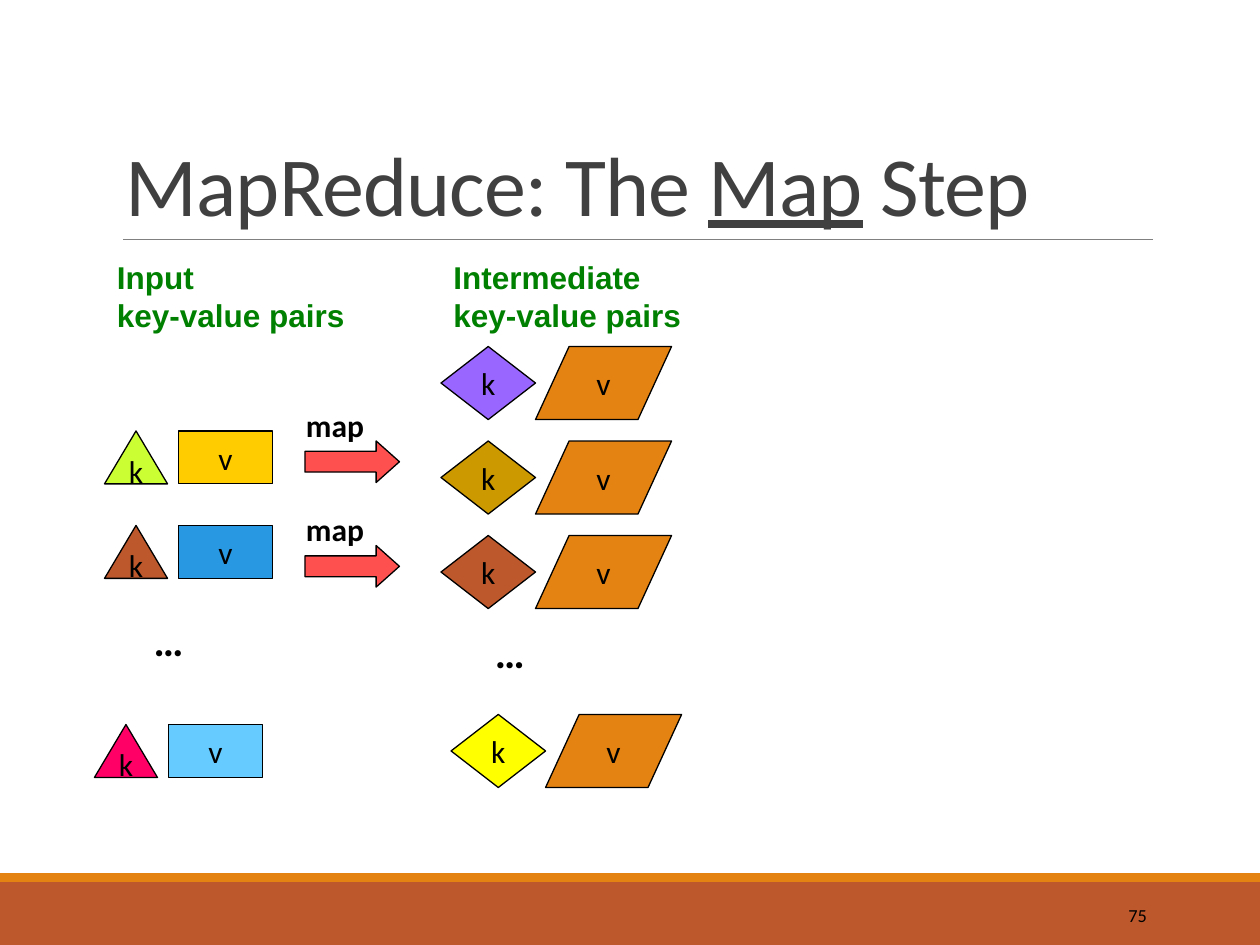
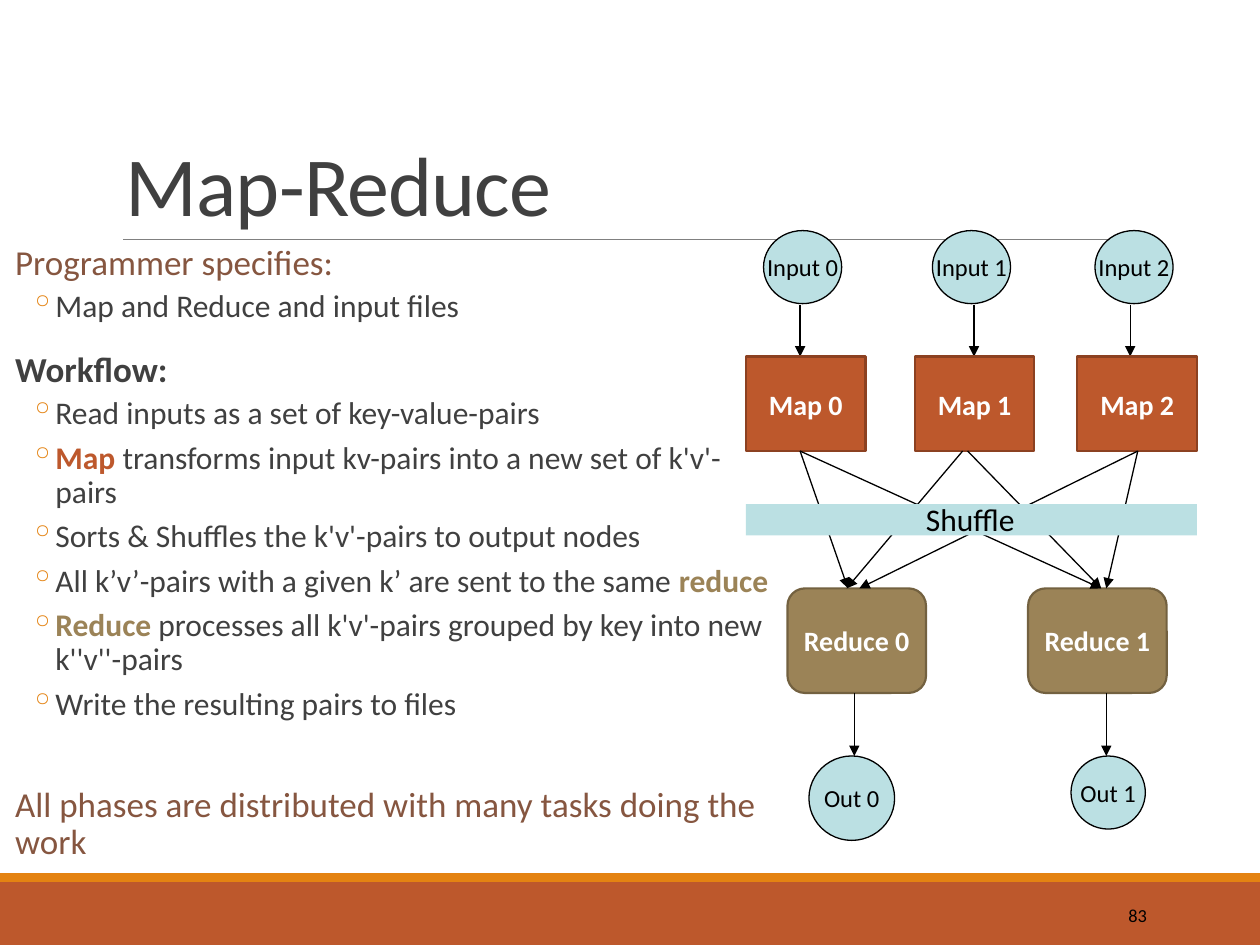
import pptx
import pptx.dml.color
import pptx.enum.shapes
import pptx.enum.text
import pptx.oxml.ns
import pptx.util
from lxml import etree

RGBColor = pptx.dml.color.RGBColor
Inches = pptx.util.Inches
Pt = pptx.util.Pt
qn = pptx.oxml.ns.qn
SHAPE = pptx.enum.shapes.MSO_SHAPE
ALIGN = pptx.enum.text.PP_ALIGN
ANCHOR = pptx.enum.text.MSO_ANCHOR

BLACK = RGBColor(0x00, 0x00, 0x00)
WHITE = RGBColor(0xFF, 0xFF, 0xFF)
GRAY = RGBColor(0x80, 0x80, 0x80)
DARK_GRAY = RGBColor(0x40, 0x40, 0x40)
RUST = RGBColor(0xBD, 0x58, 0x2C)
DARK_RUST = RGBColor(0x8C, 0x41, 0x21)
ORANGE = RGBColor(0xE4, 0x83, 0x12)
BROWN = RGBColor(0x86, 0x56, 0x40)
KHAKI = RGBColor(0x9B, 0x83, 0x57)
DARK_KHAKI = RGBColor(0x73, 0x61, 0x40)
PALE_BLUE = RGBColor(0xBB, 0xE0, 0xE3)
GREEN = RGBColor(0x00, 0x80, 0x00)
ARROW_RED = RGBColor(0xFF, 0x50, 0x50)
BLUE = RGBColor(0x29, 0x98, 0xE3)
SKY = RGBColor(0x66, 0xCC, 0xFF)
AMBER = RGBColor(0xFF, 0xCC, 0x00)
LIME = RGBColor(0xCC, 0xFF, 0x33)
PINK = RGBColor(0xFF, 0x00, 0x66)
PURPLE = RGBColor(0x99, 0x66, 0xFF)
OCHRE = RGBColor(0xCC, 0x99, 0x00)
YELLOW = RGBColor(0xFF, 0xFF, 0x00)


def add_box(slide, kind, at, lines=(), size=18, color=BLACK, bold=False, font="Calibri",
            fill=None, outline=None, outline_width=0.75, wrap=False,
            align=ALIGN.CENTER, anchor=ANCHOR.MIDDLE):
    """Add a preset shape, or a text box if kind is None; a line is a list of (text, changes)."""
    place = [Inches(length) for length in at]
    if kind is None:
        shape = slide.shapes.add_textbox(*place)
    else:
        shape = slide.shapes.add_shape(kind, *place)
        shape.shadow.inherit = False
        shape.fill.solid()
        shape.fill.fore_color.rgb = fill
        if outline is None:
            shape.line.fill.background()
        else:
            shape.line.color.rgb = outline
            shape.line.width = Pt(outline_width)
    frame = shape.text_frame
    frame.word_wrap = wrap
    frame.vertical_anchor = anchor
    for index, line in enumerate(lines):
        paragraph = frame.add_paragraph() if index else frame.paragraphs[0]
        paragraph.alignment = align
        for text, changes in line:
            run = paragraph.add_run()
            run.text = text
            run.font.name = font
            run.font.size = Pt(changes.get("size", size))
            run.font.bold = changes.get("bold", bold)
            run.font.underline = changes.get("underline", False)
            run.font.color.rgb = changes.get("color", color)
    return shape


def add_line(slide, start, end, color=BLACK, width=0.75, arrow=True):
    connector = slide.shapes.add_connector(
        pptx.enum.shapes.MSO_CONNECTOR.STRAIGHT,
        *[Inches(length) for length in (*start, *end)])
    connector.line.color.rgb = color
    connector.line.width = Pt(width)
    properties = connector._element.spPr
    if arrow:
        etree.SubElement(properties.find(qn("a:ln")), qn("a:tailEnd"), type="triangle")
    etree.SubElement(properties, qn("a:effectLst"))


presentation = pptx.Presentation()
presentation.slide_width = Inches(10)
presentation.slide_height = Inches(7.5)

# Shared frame: bands, rule, title and slide number
titles = [
    ([("MapReduce: The ", {}), ("Map", {"underline": True}), (" Step", {})], "75"),
    ([("Map-Reduce", {})], "83"),
]
slides = []
for title_runs, number in titles:
    slide = presentation.slides.add_slide(presentation.slide_layouts[6])
    add_box(slide, SHAPE.RECTANGLE, (0, 7, 10, 0.5), fill=RUST)
    add_box(slide, SHAPE.RECTANGLE, (0, 6.93, 10, 0.07), fill=ORANGE)
    add_line(slide, (0.98, 1.9), (9.15, 1.9), GRAY, 0.5, arrow=False)
    title = add_box(slide, None, (0.9, 0.31, 8.25, 1.59), [title_runs], 48, DARK_GRAY,
                    wrap=True, align=ALIGN.LEFT, anchor=ANCHOR.BOTTOM)
    paragraph = title.text_frame.paragraphs[0]
    paragraph.line_spacing = 0.85
    for run in paragraph.runs:
        run.font._element.set("spc", "-50")
    add_box(slide, None, (8.12, 7.06, 1.08, 0.4), [[(number, {})]], 10.5,
            wrap=True, align=ALIGN.RIGHT)
    slides.append(slide)
map_slide, workflow_slide = slides

# Map step: column headings
for left, heading in ((0.83, "Input"), (3.5, "Intermediate")):
    add_box(map_slide, None, (left, 2, 2.03, 0.71),
            [[(heading, {})], [("key-value pairs", {})]],
            color=GREEN, bold=True, font="Arial", align=ALIGN.LEFT, anchor=ANCHOR.TOP)

# Map step: input pairs
for left, top, key_color, value_color in (
        (0.83, 3.42, LIME, AMBER), (0.83, 4.17, RUST, BLUE), (0.75, 5.75, PINK, SKY)):
    add_box(map_slide, SHAPE.ISOSCELES_TRIANGLE, (left, top, 0.5, 0.42), [[("k", {})]],
            fill=key_color, outline=BLACK)
    add_box(map_slide, SHAPE.RECTANGLE, (left + 0.585, top, 0.75, 0.42), [[("v", {})]],
            fill=value_color, outline=BLACK)

# Map step: intermediate pairs
for left, top, key_color in (
        (3.5, 2.75, PURPLE), (3.5, 3.5, OCHRE), (3.5, 4.25, RUST), (3.58, 5.67, YELLOW)):
    add_box(map_slide, SHAPE.DIAMOND, (left, top, 0.75, 0.58), [[("k", {})]],
            fill=key_color, outline=BLACK)
    value = add_box(map_slide, SHAPE.PARALLELOGRAM, (left + 0.75, top, 1.08, 0.58),
                    [[("v", {})]], fill=ORANGE, outline=BLACK)
    value.adjustments[0] = 0.46

# Map step: map arrows and ellipses
for top in (3.17, 4):
    arrow = add_box(map_slide, SHAPE.RIGHT_ARROW, (2.42, top + 0.33, 0.75, 0.33),
                    fill=ARROW_RED, outline=BLACK)
    arrow.adjustments[1] = 0.56
    add_box(map_slide, None, (2.33, top, 0.69, 0.4), [[("map", {})]],
            bold=True, align=ALIGN.LEFT, anchor=ANCHOR.TOP)
for left, top in ((1.12, 4.83), (3.83, 4.92)):
    add_box(map_slide, None, (left, top, 0.55, 0.5), [[("…", {})]], 24,
            bold=True, align=ALIGN.LEFT, anchor=ANCHOR.TOP)

# Workflow: outline text, as (is bullet, runs)
lead = {"size": 20, "color": BROWN}
map_word = {"color": RUST, "bold": True}
reduce_word = {"color": KHAKI, "bold": True}
outline_text = [
    (False, [("Programmer specifies:", lead)]),
    (True, [("Map and Reduce and input files", {})]),
    (False, [("Workflow:", {"size": 20, "bold": True})]),
    (True, [("Read inputs as a set of key-value-pairs", {})]),
    (True, [("Map ", map_word),
            ("transforms input kv-pairs into a new set of k'v'-pairs", {})]),
    (True, [("Sorts & Shuffles the k'v'-pairs to output nodes", {})]),
    (True, [("All k’v’-pairs with a given k’ are sent to the same ", {}),
            ("reduce", reduce_word)]),
    (True, [("Reduce ", reduce_word),
            ("processes all k'v'-pairs grouped by key into new k''v''-pairs", {})]),
    (True, [("Write the resulting pairs to files", {})]),
    (False, [("All phases are distributed with many tasks doing the work", lead)]),
]
body = add_box(workflow_slide, None, (0.02, 1.9, 6.1, 5.0), [runs for _, runs in outline_text],
               color=DARK_GRAY, wrap=True, align=ALIGN.LEFT, anchor=ANCHOR.TOP)
body.text_frame.margin_left = body.text_frame.margin_right = 0
for paragraph, (is_bullet, _) in zip(body.text_frame.paragraphs, outline_text):
    paragraph.line_spacing = 0.9
    paragraph.space_before = Pt(2 if is_bullet else 12)
    paragraph.space_after = Pt(4 if is_bullet else 2)
    properties = paragraph._element.get_or_add_pPr()
    properties.set("marL", str(Inches(0.42 if is_bullet else 0.1)))
    if is_bullet:
        properties.set("indent", str(Inches(-0.2)))
        bullet_color = etree.SubElement(properties, qn("a:buClr"))
        etree.SubElement(bullet_color, qn("a:srgbClr"), val=str(ORANGE))
        etree.SubElement(properties, qn("a:buChar"), char="◦")
body.text_frame.paragraphs[-1].space_before = Pt(33)

# Workflow: inputs and map tasks
for index, (left, arrow_x) in enumerate(((5.92, 6.35), (7.26, 7.73), (8.55, 8.97))):
    add_box(workflow_slide, SHAPE.OVAL, (left + 0.14, 1.83, 0.62, 0.58),
            [[(f"Input {index}", {})]], 14, fill=PALE_BLUE, outline=BLACK)
    add_line(workflow_slide, (arrow_x, 2.42), (arrow_x, 2.83))
    add_box(workflow_slide, SHAPE.RECTANGLE, (left, 2.83, 0.95, 0.75),
            [[(f"Map {index}", {})]], 16, WHITE, True,
            fill=RUST, outline=DARK_RUST, outline_width=1.25)

# Workflow: reduce tasks and outputs
for index, (left, arrow_x, out_at) in enumerate((
        (6.25, 6.78, (6.42, 6, 0.68, 0.67)), (8.16, 8.78, (8.5, 6, 0.59, 0.58)))):
    add_box(workflow_slide, SHAPE.ROUNDED_RECTANGLE, (left, 4.67, 1.1, 0.83),
            [[(f"Reduce {index}", {})]], 16, WHITE, True,
            fill=KHAKI, outline=DARK_KHAKI, outline_width=1.25)
    add_box(workflow_slide, SHAPE.OVAL, out_at, [[(f"Out {index}", {})]], 14,
            fill=PALE_BLUE, outline=BLACK)
    add_line(workflow_slide, (arrow_x, 5.5), (arrow_x, 6))

# Workflow: every map task feeds every reduce task through the shuffle
for map_x, reduce_x in ((6.35, 6.73), (6.35, 8.74), (7.64, 6.72),
                        (7.68, 8.74), (9.03, 6.82), (9.03, 8.78)):
    add_line(workflow_slide, (map_x, 3.58), (reduce_x, 4.67))
add_box(workflow_slide, SHAPE.RECTANGLE, (5.92, 4, 3.58, 0.25), fill=PALE_BLUE)
add_box(workflow_slide, None, (7.25, 3.92, 0.98, 0.4), [[("Shuffle", {})]],
        align=ALIGN.LEFT, anchor=ANCHOR.TOP)

presentation.save("out.pptx")
